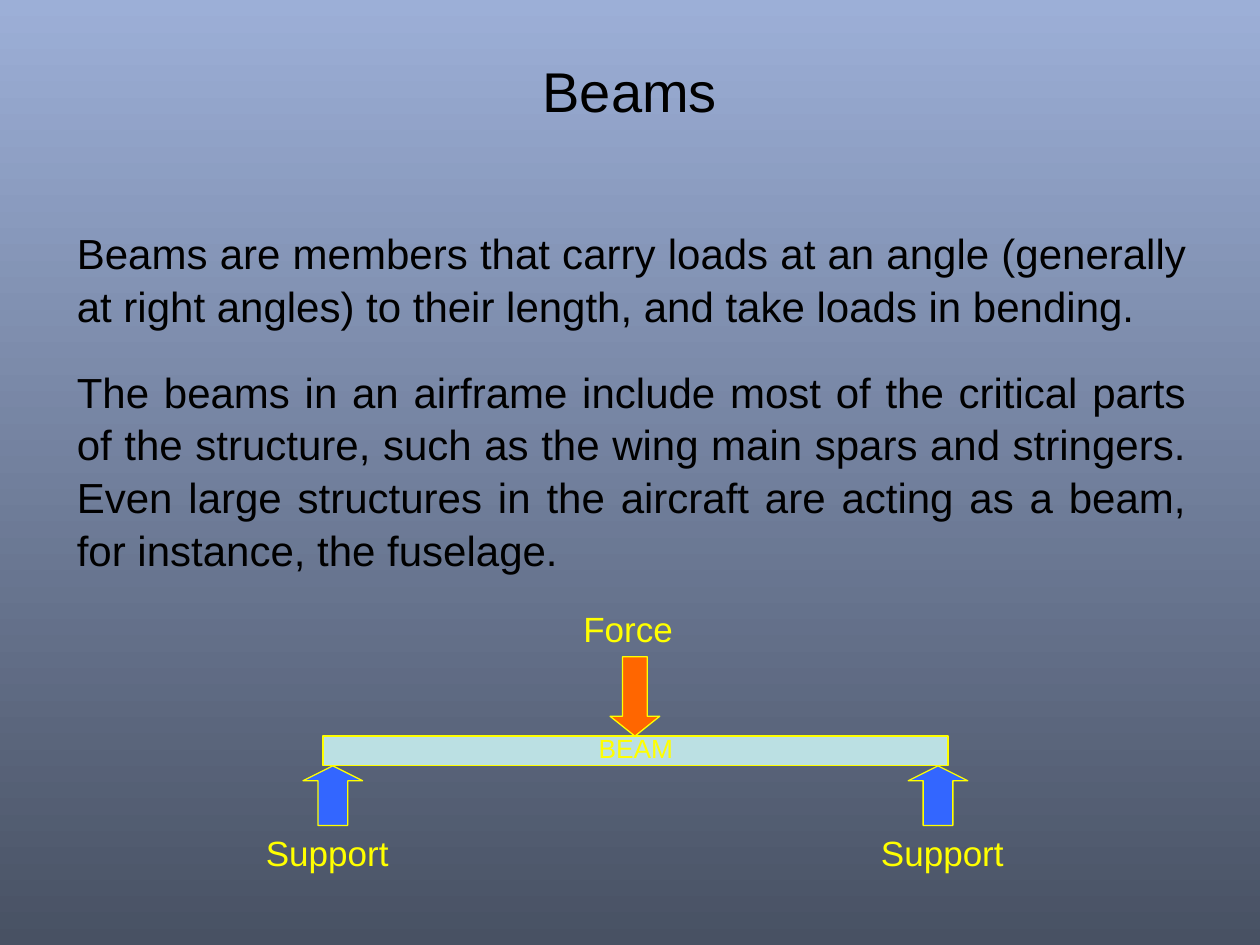
from pptx import Presentation
from pptx.dml.color import RGBColor
from pptx.enum.shapes import MSO_SHAPE
from pptx.enum.text import MSO_ANCHOR, PP_ALIGN
from pptx.util import Cm, Pt

COLOURS = {
    "sky": "9CAFD7",
    "slate": "485163",
    "ink": "000000",
    "yellow": "FFFF00",
    "beam": "BBE0E3",
    "force": "FF6600",
    "support": "3366FF",
}
TITLE = "Beams"
PARAGRAPHS = [
    "Beams are members that carry loads at an angle (generally at right angles) "
    "to their length, and take loads in bending.",
    "The beams in an airframe include most of the critical parts of the structure, "
    "such as the wing main spars and stringers. Even large structures in the "
    "aircraft are acting as a beam, for instance, the fuselage.",
]
TITLE_FORMAT = {"alignment": PP_ALIGN.CENTER}
BODY_FORMAT = {"alignment": PP_ALIGN.JUSTIFY, "line_spacing": 1.05}
LABEL_FORMAT = {"alignment": PP_ALIGN.LEFT}


def colour(name):
    """Return the named colour of the slide."""
    return RGBColor.from_string(COLOURS[name])


def add_text(slide, box, paragraphs, size, ink, layout, gap=0, anchor=MSO_ANCHOR.TOP):
    """Place paragraphs in a box given in centimetres."""
    frame = slide.shapes.add_textbox(*map(Cm, box)).text_frame
    frame.word_wrap = True
    frame.vertical_anchor = anchor
    font_format = {"name": "Arial", "size": Pt(size)}
    for index, wording in enumerate(paragraphs):
        paragraph = frame.add_paragraph() if index else frame.paragraphs[0]
        paragraph.text = wording
        paragraph.space_before = Pt(gap if index else 0)
        for key, value in layout.items():
            setattr(paragraph, key, value)
        font = paragraph.runs[0].font
        for key, value in font_format.items():
            setattr(font, key, value)
        font.color.rgb = colour(ink)


def add_part(slide, preset, box, fill, head=None):
    """Draw one yellow-edged part of the diagram, with an arrow head length if given."""
    part = slide.shapes.add_shape(preset, *map(Cm, box))
    part.shadow.inherit = False
    part.fill.solid()
    part.fill.fore_color.rgb = colour(fill)
    part.line.color.rgb = colour("yellow")
    part.line.width = Pt(0.75)
    if head is not None:
        part.adjustments[0] = 0.5
        part.adjustments[1] = head


def add_background(slide):
    """Fill the slide with a gradient running from top to bottom."""
    fill = slide.background.fill
    fill.gradient()
    fill.gradient_angle = 270
    for stop, name in zip(fill.gradient_stops, ("sky", "slate")):
        stop.color.rgb = colour(name)


def add_beam_diagram(slide, left, top):
    """Draw the loaded beam on its two supports from the given corner."""

    def place(x, y, width, height):
        """Shift a box into the diagram."""
        return left + x, top + y, width, height

    def label(wording, size, *box):
        """Write one yellow label in the diagram."""
        add_text(slide, place(*box), [wording], size, "yellow", LABEL_FORMAT)

    add_part(slide, MSO_SHAPE.RECTANGLE, place(1.4, 2.72, 12.6, 0.6), "beam")
    add_part(slide, MSO_SHAPE.DOWN_ARROW, place(7.19, 1.12, 1, 1.6), "force", 0.4)
    label("BEAM", 15, 6.71, 2.51, 2.6, 0.89)
    label("Force", 20, 6.4, 0, 2.6, 1.09)
    for arrow_x, label_x in ((1, 0), (13.2, 12.4)):
        add_part(slide, MSO_SHAPE.UP_ARROW, place(arrow_x, 3.32, 1.2, 1.2), "support", 0.25)
        label("Support", 20, label_x, 4.52, 3.2, 1.09)


def build():
    """Build and save the slide."""
    presentation = Presentation()
    presentation.slide_width = Cm(25.4)
    presentation.slide_height = Cm(19.05)
    slide = presentation.slides.add_slide(presentation.slide_layouts[6])
    add_background(slide)
    add_text(slide, (1.27, 0.23, 22.86, 3.18), [TITLE], 32, "ink", TITLE_FORMAT,
             anchor=MSO_ANCHOR.MIDDLE)
    add_text(slide, (1.3, 4.42, 22.86, 12.57), PARAGRAPHS, 24, "ink", BODY_FORMAT, gap=18.5)
    add_beam_diagram(slide, 5.11, 12.12)
    presentation.save("out.pptx")


if __name__ == "__main__":
    build()
